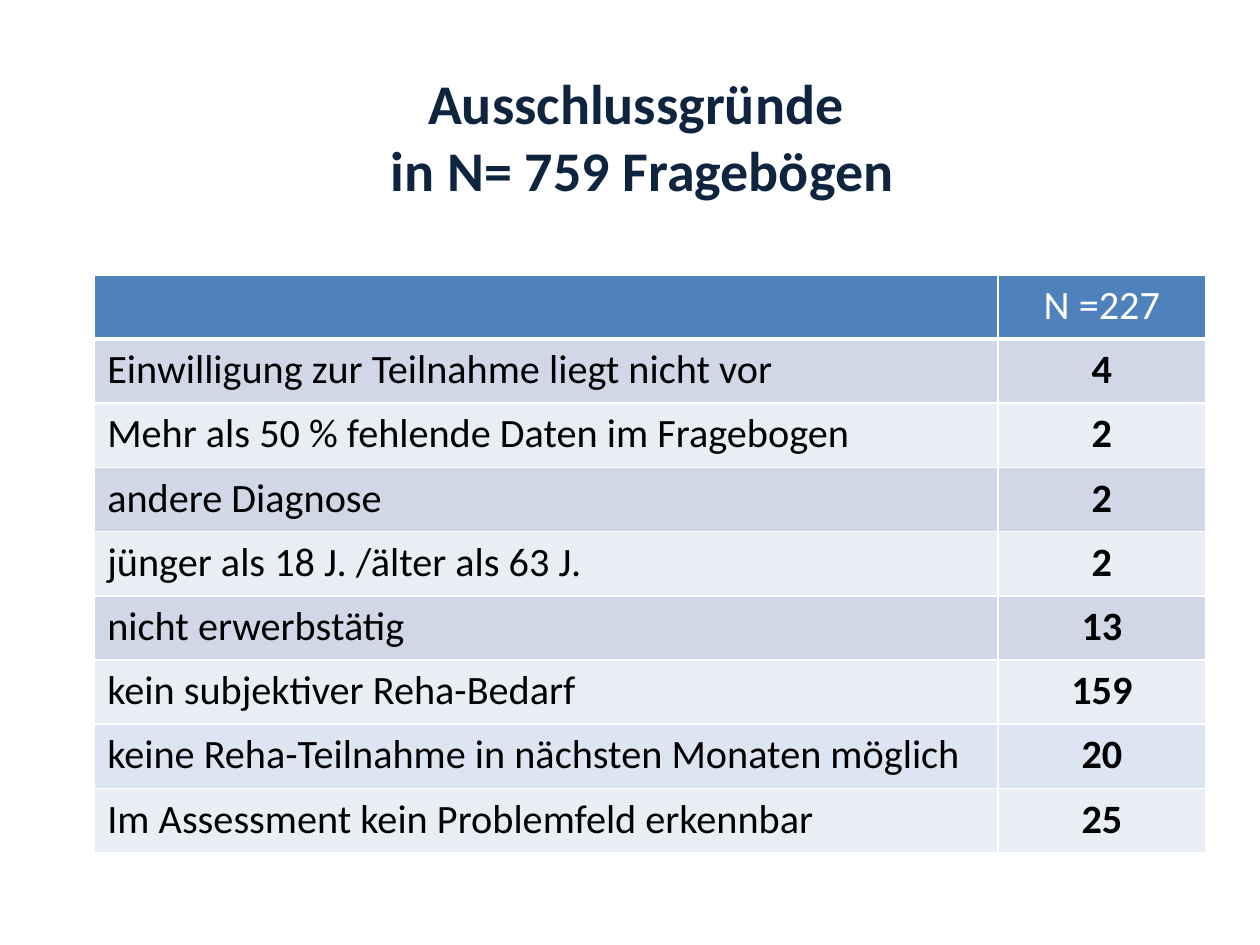
from lxml.etree import SubElement
from pptx import Presentation
from pptx.dml.color import RGBColor
from pptx.enum.text import MSO_ANCHOR as Anchor, PP_ALIGN as Align
from pptx.oxml.ns import qn
from pptx.util import Cm, Pt

FONT = "Calibri"
WHITE, BLACK, NAVY, HEADER_BLUE = "FFFFFF", "000000", "0F243E", "4F81BD"
DARK_BAND, LIGHT_BAND, HIGHLIGHT = "D0D8E8", "E9EDF4", "DCE6F2"

TITLE_LINES = ["Ausschlussgründe ", "in N= 759 Fragebögen"]
HEADER = ("", "N =227")
REASONS = [
    ("Einwilligung zur Teilnahme liegt nicht vor", "4"),
    ("Mehr als 50 % fehlende Daten im Fragebogen", "2"),
    ("andere Diagnose", "2"),
    ("jünger als 18 J. /älter als 63 J.", "2"),
    ("nicht erwerbstätig", "13"),
    ("kein subjektiver Reha-Bedarf", "159"),
    ("keine Reha-Teilnahme in nächsten Monaten möglich", "20"),
    ("Im Assessment kein Problemfeld erkennbar", "25"),
]
HIGHLIGHTED_ROW = 7


def color(hex_string):
    return RGBColor.from_string(hex_string)


def add_run(paragraph, text, size, hex_color, bold=False):
    run = paragraph.add_run()
    run.text = text
    run.font.name = FONT
    run.font.size = Pt(size)
    run.font.bold = bold
    run.font.color.rgb = color(hex_color)


def set_cell_borders(cell, bottom_width):
    """Draw white borders, 1 pt wide except at the bottom."""
    properties = cell._tc.get_or_add_tcPr()
    widths = {"a:lnL": 1, "a:lnR": 1, "a:lnT": 1, "a:lnB": bottom_width}
    for tag, width in widths.items():
        line = SubElement(properties, qn(tag), w=str(Pt(width)))
        fill = SubElement(line, qn("a:solidFill"))
        SubElement(fill, qn("a:srgbClr"), val=WHITE)


def row_fill(row):
    if row == 0:
        return HEADER_BLUE
    if row == HIGHLIGHTED_ROW:
        return HIGHLIGHT
    return DARK_BAND if row % 2 else LIGHT_BAND


def add_title(slide, left, top, width, height):
    title = slide.shapes.add_textbox(left, top, width, height)
    title.fill.solid()
    title.fill.fore_color.rgb = color(WHITE)
    frame = title.text_frame
    frame.word_wrap = True
    frame.vertical_anchor = Anchor.MIDDLE
    paragraph = frame.paragraphs[0]
    paragraph.alignment = Align.CENTER
    for index, line in enumerate(TITLE_LINES):
        if index:
            paragraph.add_line_break()
        add_run(paragraph, line, 32, NAVY, bold=True)


def add_reasons_table(slide, left, top, width, height):
    rows = [HEADER] + REASONS
    table = slide.shapes.add_table(len(rows), 2, left, top, width, height).table
    count_width = Cm(4.19)
    table.columns[0].width = width - count_width
    table.columns[1].width = count_width
    for row, texts in enumerate(rows):
        is_header = row == 0
        for column, text in enumerate(texts):
            cell = table.cell(row, column)
            set_cell_borders(cell, 3 if is_header else 1)
            cell.fill.solid()
            cell.fill.fore_color.rgb = color(row_fill(row))
            paragraph = cell.text_frame.paragraphs[0]
            paragraph.alignment = Align.CENTER if column else Align.LEFT
            if text:
                add_run(paragraph, text, 23, WHITE if is_header else BLACK,
                        bold=column == 1 and not is_header)


def main():
    presentation = Presentation()
    presentation.slide_width = Cm(25.4)
    presentation.slide_height = Cm(19.05)
    slide = presentation.slides.add_slide(presentation.slide_layouts[6])
    add_title(slide, Cm(0.5), Cm(0.33), Cm(24.9), Cm(4.8))
    add_reasons_table(slide, Cm(1.91), Cm(5.54), Cm(22.4), Cm(11.65))
    presentation.save("out.pptx")


if __name__ == "__main__":
    main()
